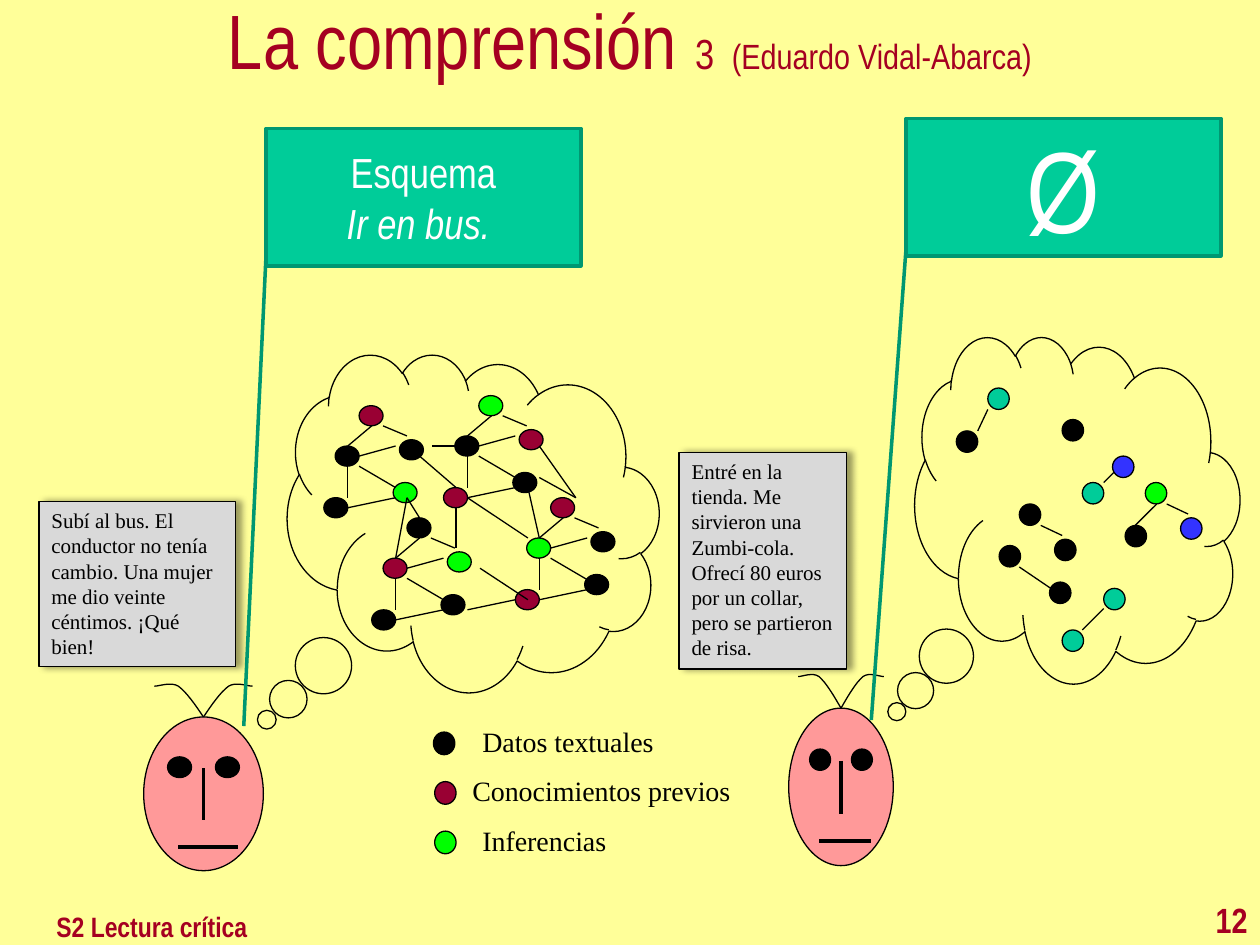
"""Builds the slide "La comprensión 3": two readers, their flags and their networks of ideas."""
from lxml.etree import SubElement
from pptx import Presentation
from pptx.dml.color import RGBColor
from pptx.enum.shapes import MSO_CONNECTOR as Connector, MSO_SHAPE as Preset
from pptx.enum.text import MSO_ANCHOR as Anchor, PP_ALIGN as Align
from pptx.oxml.ns import qn
from pptx.util import Inches, Pt

COLUMNS, ROWS = 1000, 750
CELL = Inches(10) / COLUMNS

THEME = {
    "color": {
        "paper": "FFFF99", "title": "A50021", "ink": "000000", "white": "FFFFFF",
        "skin": "FF9999", "note": "D9D9D9", "flag": "00CC99", "pole": "009771",
        "text": "000000", "prior": "990033", "inference": "00FF00",
        "stray": "3333FF", "loose": "00CC99",
    },
    "font": {"narrow": "Arial Narrow", "serif": "Times New Roman"},
    "size": {"title": 44, "part": 24, "author": 20, "page": 20, "footer": 16,
             "legend": 16, "note": 12, "flag": 24, "empty": 66},
    "line": {"thin": 0.75, "face": 2.25, "flag": 2},
}

TITLE = [("La comprensión ", "title"), ("3", "part"), (" ", "title"),
         ("(Eduardo Vidal-Abarca)", "author")]
FOOTER, PAGE_NUMBER = "S2 Lectura crítica", "12"
FACES = [(114, 569, 95, 122), (626, 562, 83, 125)]
CLOUDS = [(228, 281, 295, 268), (726, 267, 258, 275)]
NOTES = [
    ((539, 359, 133, 172), "Entré en la tienda. Me sirvieron una Zumbi-cola. Ofrecí 80 euros "
                           "por un collar, pero se partieron de risa."),
    ((31, 398, 156, 131), "Subí al bus. El conductor no tenía cambio. Una mujer me dio veinte "
                          "céntimos. ¡Qué\vbien!"),
]
FLAGS = [
    ((719, 94, 250, 109), (0.96, 0, 4.38, -0.11), "Ø", "empty"),
    ((211, 102, 250, 109), (0.96, 0, 4.35, -0.07), "Esquema\nIr en bus. ", "flag"),
]
LEGEND = [("Datos textuales", "text", 344, 373), ("Conocimientos previos", "prior", 345, 365),
          ("Inferencias", "inference", 345, 373)]
LEGEND_TOP, LEGEND_STEP = 570, 39.3

CLUSTER_NODES = [(60, 27), (55, 61), (9, 32), (0, 73), (28, 0)]
CLUSTER_LINKS = [(19, 81, 57, 73), (28, 40, 57, 32), (19, 48, 19, 73),
                 (19, 32, 38, 16), (66, 24, 47, 16), (28, 48, 57, 65)]
CLUSTERS = [
    ((409, 395), ("text", "text", "inference", "prior", "prior")),
    ((257, 322), ("text", "inference", "text", "text", "prior")),
    ((295, 411), ("inference", "text", "prior", "text", "text")),
    ((352, 314), ("prior", "text", "text", "prior", "inference")),
]
BRIDGES = [
    (343, 354, 362, 354), (323, 395, 333, 411), (333, 362, 362, 387), (362, 403, 362, 435),
    (419, 387, 428, 427), (428, 379, 457, 395), (381, 451, 419, 476), (371, 484, 409, 476),
    (323, 395, 314, 443), (371, 395, 419, 427), (428, 354, 457, 395),
]
LOOSE_NODES = {
    "text": [(893, 417), (759, 342), (837, 428), (833, 462), (793, 433), (809, 400), (843, 333)],
    "stray": [(937, 411), (883, 362)],
    "inference": [(909, 383)],
    "loose": [(876, 467), (859, 383), (843, 500), (784, 308)],
}
LOOSE_LINKS = [
    (901, 417, 918, 400), (943, 408, 926, 400), (843, 425, 826, 417), (809, 450, 834, 467),
    (876, 383, 884, 375), (859, 500, 876, 483), (784, 325, 776, 342),
]
EYES = [(0.2, 0.26), (0.6, 0.26)]
FACE_LINES = [(0.5, 0.335, 0.5, 0.67), (0.29, 0.845, 0.79, 0.845)]
ANTENNA = [[(0, 0), (0.07, -0.08), (0.14, -0.16), (0.21, -0.2)],
           [(0.21, -0.2), (0.27, -0.23), (0.37, -0.2), (0.41, -0.2)]]


def cells(*numbers):
    return [round(number * CELL) for number in numbers]


def color(name):
    return RGBColor.from_string(THEME["color"][name])


def outline(shape, stroke="ink", width="thin"):
    shape.line.color.rgb = color(stroke)
    shape.line.width = Pt(THEME["line"][width])


def add_preset(page, preset, area, fill=None, stroke="ink", width="thin"):
    shape = page.shapes.add_shape(preset, *cells(*area))
    shape.shadow.inherit = False
    if fill:
        shape.fill.solid()
        shape.fill.fore_color.rgb = color(fill)
    else:
        shape.fill.background()
    outline(shape, stroke, width)
    return shape


def add_link(page, ends, width="thin"):
    link = page.shapes.add_connector(Connector.STRAIGHT, *cells(*ends))
    outline(link, "ink", width)
    SubElement(link._element.spPr, qn("a:effectLst"))


def style(span, font, size, ink, bold=False):
    span.font.name = THEME["font"][font]
    span.font.size = Pt(THEME["size"][size])
    span.font.color.rgb = color(ink)
    span.font.bold = bold


def write(shape, text, font, size, ink, align=Align.LEFT, anchor=Anchor.TOP, bold=False):
    frame = shape.text_frame
    frame.word_wrap = True
    frame.vertical_anchor = anchor
    frame.text = text
    for para in frame.paragraphs:
        para.alignment = align
        for span in para.runs:
            style(span, font, size, ink, bold)
    return frame


def add_text(page, area, *args, **options):
    return write(page.shapes.add_textbox(*cells(*area)), *args, **options)


def add_title(page):
    frame = add_text(page, (0, 0, COLUMNS, 76), "", "narrow", "title", "title",
                     Align.CENTER, Anchor.MIDDLE)
    para = frame.paragraphs[0]
    para.line_spacing = 0.8
    for text, size in TITLE:
        span = para.add_run()
        span.text = text
        style(span, "narrow", size, "title")


def bezier(points, steps=8):
    for step in range(steps + 1):
        t = step / steps
        weights = ((1 - t) ** 3, 3 * t * (1 - t) ** 2, 3 * t ** 2 * (1 - t), t ** 3)
        yield tuple(sum(w * point[axis] for w, point in zip(weights, points)) for axis in (0, 1))


def add_face(page, area):
    left, top, width, height = area
    add_preset(page, Preset.OVAL, area, "skin")
    for x, y in EYES:
        add_preset(page, Preset.OVAL, (left + x * width, top + y * height,
                                       0.2 * width, 0.135 * height), "ink")
    for x1, y1, x2, y2 in FACE_LINES:
        add_link(page, (left + x1 * width, top + y1 * height,
                        left + x2 * width, top + y2 * height), "face")
    for side in (-1, 1):
        points = [cells(left + (0.5 + side * x) * width, top + y * height)
                  for curve in ANTENNA for x, y in bezier(curve)]
        builder = page.shapes.build_freeform(*points[0])
        builder.add_line_segments(points[1:], close=False)
        antenna = builder.convert_to_shape()
        antenna.shadow.inherit = False
        antenna.fill.background()
        outline(antenna)


def add_cloud(page, area):
    cloud = add_preset(page, Preset.CLOUD_CALLOUT, area)
    cloud.adjustments[0], cloud.adjustments[1] = 0.555, 0.583
    cloud._element.spPr.xfrm.set("flipH", "1")


def add_networks(page):
    for (left, top), kinds in CLUSTERS:
        for (x, y), kind in zip(CLUSTER_NODES, kinds):
            add_preset(page, Preset.OVAL, (left + x, top + y, 19, 16), kind)
        for x1, y1, x2, y2 in CLUSTER_LINKS:
            add_link(page, (left + x1, top + y1, left + x2, top + y2))
    for kind, places in LOOSE_NODES.items():
        for place in places:
            add_preset(page, Preset.OVAL, (*place, 17, 17), kind)
    for ends in BRIDGES + LOOSE_LINKS:
        add_link(page, ends)


def add_note(page, area, text):
    note = add_preset(page, Preset.RECTANGLE, area, "note")
    write(note, text, "serif", "note", "ink")
    effects = note._element.spPr.find(qn("a:effectLst"))
    shadow = SubElement(effects, qn("a:outerShdw"), blurRad=str(Pt(4)), dist=str(Pt(3)),
                        dir="0", algn="l", rotWithShape="0")
    tint = SubElement(shadow, qn("a:srgbClr"), val=THEME["color"]["ink"])
    SubElement(tint, qn("a:alpha"), val="40000")


def add_flag(page, area, pole, text, size):
    flag = add_preset(page, Preset.LINE_CALLOUT_1, area, "flag", "pole", "flag")
    for index, value in enumerate(pole):
        flag.adjustments[index] = value
    frame = write(flag, text, "narrow", size, "white", Align.CENTER, Anchor.MIDDLE)
    for para in frame.paragraphs[1:]:
        para.runs[0].font.italic = True


def main():
    deck = Presentation()
    deck.slide_width, deck.slide_height = cells(COLUMNS, ROWS)
    page = deck.slides.add_slide(deck.slide_layouts[6])
    page.background.fill.solid()
    page.background.fill.fore_color.rgb = color("paper")
    add_title(page)
    add_text(page, (925, 708, 75, 42), PAGE_NUMBER, "narrow", "page", "title",
             Align.RIGHT, bold=True)
    for face, cloud in zip(FACES, CLOUDS):
        add_face(page, face)
        add_cloud(page, cloud)
    add_networks(page)
    for row, (label, kind, dot_left, text_left) in enumerate(LEGEND):
        top = LEGEND_TOP + row * LEGEND_STEP
        add_preset(page, Preset.OVAL, (dot_left, top + 11, 17, 18), kind)
        add_text(page, (text_left, top, 237, 37), label, "serif", "legend", "ink")
    for note in NOTES:
        add_note(page, *note)
    for flag in FLAGS:
        add_flag(page, *flag)
    add_text(page, (35, 717, 606, 33), FOOTER, "narrow", "footer", "title", bold=True)
    deck.save("out.pptx")


if __name__ == "__main__":
    main()
